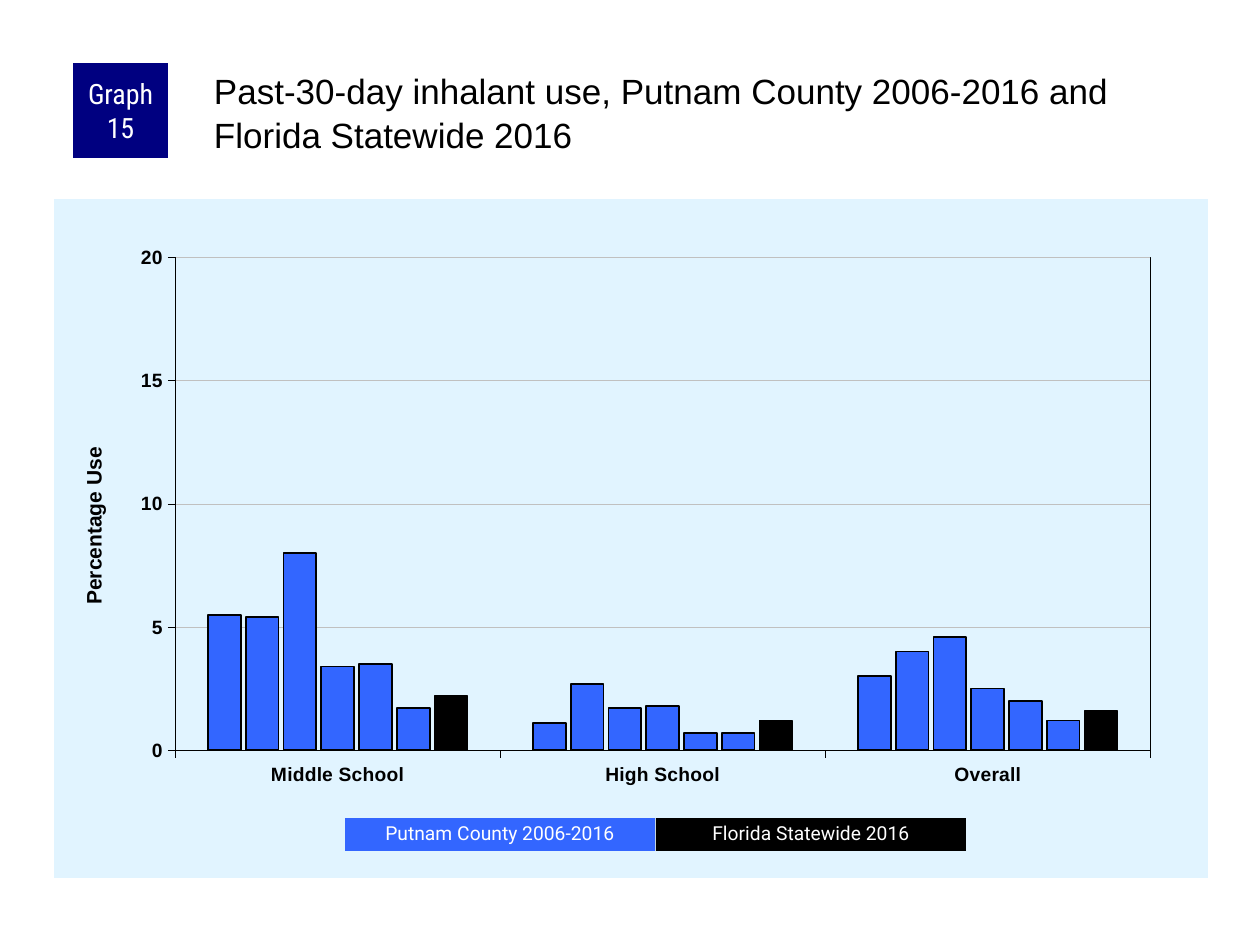
import pptx
import pptx.chart.data
import pptx.dml.color
import pptx.enum.chart
import pptx.enum.shapes
import pptx.enum.text
import pptx.oxml
import pptx.oxml.ns
import pptx.util
from dataclasses import dataclass

PX_PER_INCH = 126


@dataclass(frozen=True)
class Theme:
    navy: str = "000080"
    blue: str = "3366FF"
    black: str = "000000"
    white: str = "FFFFFF"
    panel: str = "E1F4FF"
    grid: str = "C0C0C0"
    sans: str = "Arial"
    label: str = "Roboto"
    condensed: str = "Roboto Condensed"
    title_size: int = 20
    badge_size: int = 16
    axis_title_size: int = 12
    small_size: int = 11
    hairline: float = 0.25
    outline: float = 1


THEME = Theme()
CATEGORIES = ["Middle School", "High School", "Overall"]
COUNTY = [
    (5.5, 1.1, 3),
    (5.4, 2.7, 4),
    (8, 1.7, 4.6),
    (3.4, 1.8, 2.5),
    (3.5, 0.7, 2),
    (1.7, 0.7, 1.2),
]
STATE = (2.2, 1.2, 1.6)


def px(n):
    return pptx.util.Emu(round(n * 914400 / PX_PER_INCH))


def rgb(color):
    return pptx.dml.color.RGBColor.from_string(color)


def set_font(font, name, size, color, bold=False):
    font.name = name
    font.size = pptx.util.Pt(size)
    font.color.rgb = rgb(color)
    font.bold = bold


def set_line(line, color, width):
    line.color.rgb = rgb(color)
    line.width = pptx.util.Pt(width)


def set_margins(tf, left, top, right, bottom):
    tf.margin_left, tf.margin_top = px(left), px(top)
    tf.margin_right, tf.margin_bottom = px(right), px(bottom)


def add_block(slide, box, text, fill, font, size, spacing=1.0):
    """Add a filled rectangle with centred white text."""
    sp = slide.shapes.add_shape(
        pptx.enum.shapes.MSO_SHAPE.RECTANGLE, *map(px, box))
    sp.shadow.inherit = False
    sp.fill.solid()
    sp.fill.fore_color.rgb = rgb(fill)
    sp.line.fill.background()
    tf = sp.text_frame
    tf.word_wrap = True
    tf.vertical_anchor = pptx.enum.text.MSO_ANCHOR.MIDDLE
    set_margins(tf, 6, 0, 6, 0)
    p = tf.paragraphs[0]
    p.text = text
    p.alignment = pptx.enum.text.PP_ALIGN.CENTER
    p.line_spacing = spacing
    set_font(p.font, font, size, THEME.white)


def add_title(slide, box, text):
    tf = slide.shapes.add_textbox(*map(px, box)).text_frame
    tf.word_wrap = True
    set_margins(tf, 4, 4, 0, 0)
    p = tf.paragraphs[0]
    p.text = text
    p.line_spacing = 1.05
    set_font(p.font, THEME.sans, THEME.title_size, THEME.black)


def add_fill(parent, color, line=None):
    """Append spPr with a solid fill and an optional hairline border."""
    border = "<a:ln><a:noFill/></a:ln>"
    if line:
        width = pptx.util.Pt(THEME.hairline)
        border = (f'<a:ln w="{width}"><a:solidFill><a:srgbClr val="{line}"/>'
                  "</a:solidFill></a:ln>")
    return pptx.oxml.parse_xml(
        f'<c:spPr {pptx.oxml.ns.nsdecls("c", "a")}><a:solidFill>'
        f'<a:srgbClr val="{color}"/></a:solidFill>{border}</c:spPr>'
    ) if parent is not None else None


def manual_layout(x, y, size=None):
    """Return a c:layout placed by fractions of the chart area."""
    values = {"xMode": "edge", "yMode": "edge", "x": x, "y": y}
    if size:
        values = {"layoutTarget": "inner", **values, "w": size[0], "h": size[1]}
    items = "".join(f'<c:{k} val="{v}"/>' for k, v in values.items())
    return pptx.oxml.parse_xml(
        f'<c:layout {pptx.oxml.ns.nsdecls("c")}>'
        f"<c:manualLayout>{items}</c:manualLayout></c:layout>")


def replace_layout(parent, layout, index):
    for old in parent.findall(pptx.oxml.ns.qn("c:layout")):
        parent.remove(old)
    parent.insert(index, layout)


def style_axis(axis):
    axis.major_tick_mark = pptx.enum.chart.XL_TICK_MARK.OUTSIDE
    set_line(axis.format.line, THEME.black, THEME.hairline)
    set_font(axis.tick_labels.font, THEME.sans, THEME.small_size,
             THEME.black, True)


def style_value_axis(axis):
    axis.minimum_scale, axis.maximum_scale, axis.major_unit = 0, 20, 5
    set_line(axis.major_gridlines.format.line, THEME.grid, THEME.hairline)
    axis.tick_labels.number_format = "0"
    axis.tick_labels.number_format_is_linked = False
    title = axis.axis_title
    p = title.text_frame.paragraphs[0]
    p.text = "Percentage Use"
    set_font(p.font, THEME.sans, THEME.axis_title_size, THEME.black, True)
    replace_layout(title._element, manual_layout(0.02, 0.36), 1)


def add_usage_chart(slide, box):
    data = pptx.chart.data.CategoryChartData()
    data.categories = CATEGORIES
    for i, values in enumerate([*COUNTY, STATE], 1):
        data.add_series(f"Series {i}", values)
    chart = slide.shapes.add_chart(
        pptx.enum.chart.XL_CHART_TYPE.COLUMN_CLUSTERED,
        *map(px, box), data).chart
    chart.has_legend = False
    chart.has_title = False
    set_font(chart.font, THEME.sans, THEME.small_size, THEME.black)
    for axis in (chart.category_axis, chart.value_axis):
        style_axis(axis)
    style_value_axis(chart.value_axis)

    plot = chart.plots[0]
    plot.vary_by_categories = False
    plot.gap_width, plot.overlap = 200, -15
    for i, series in enumerate(plot.series):
        color = THEME.blue if i < len(COUNTY) else THEME.black
        series.format.fill.solid()
        series.format.fill.fore_color.rgb = rgb(color)
        set_line(series.format.line, THEME.black, THEME.outline)

    space = chart._chartSpace
    area = space.chart.plotArea
    replace_layout(area, manual_layout(0.105, 0.086, (0.845, 0.726)), 0)
    area.append(add_fill(area, THEME.panel, THEME.black))
    space.chart.addnext(add_fill(space, THEME.panel))


def main():
    prs = pptx.Presentation()
    prs.slide_width, prs.slide_height = px(1260), px(945)
    slide = prs.slides.add_slide(prs.slide_layouts[6])
    add_usage_chart(slide, (54, 199, 1154, 679))
    add_block(slide, (73, 63, 95, 95), "Graph 15", THEME.navy,
              THEME.condensed, THEME.badge_size)
    add_title(slide, (210, 63, 998, 105),
              "Past-30-day inhalant use, Putnam County 2006-2016 "
              "and Florida Statewide 2016")
    legend = [("Putnam County 2006-2016", THEME.blue),
              ("Florida Statewide 2016", THEME.black)]
    for i, (text, color) in enumerate(legend):
        add_block(slide, (345 + 311 * i, 818, 310, 33), text, color,
                  THEME.label, THEME.small_size, 0.9)
    prs.save("out.pptx")


if __name__ == "__main__":
    main()
